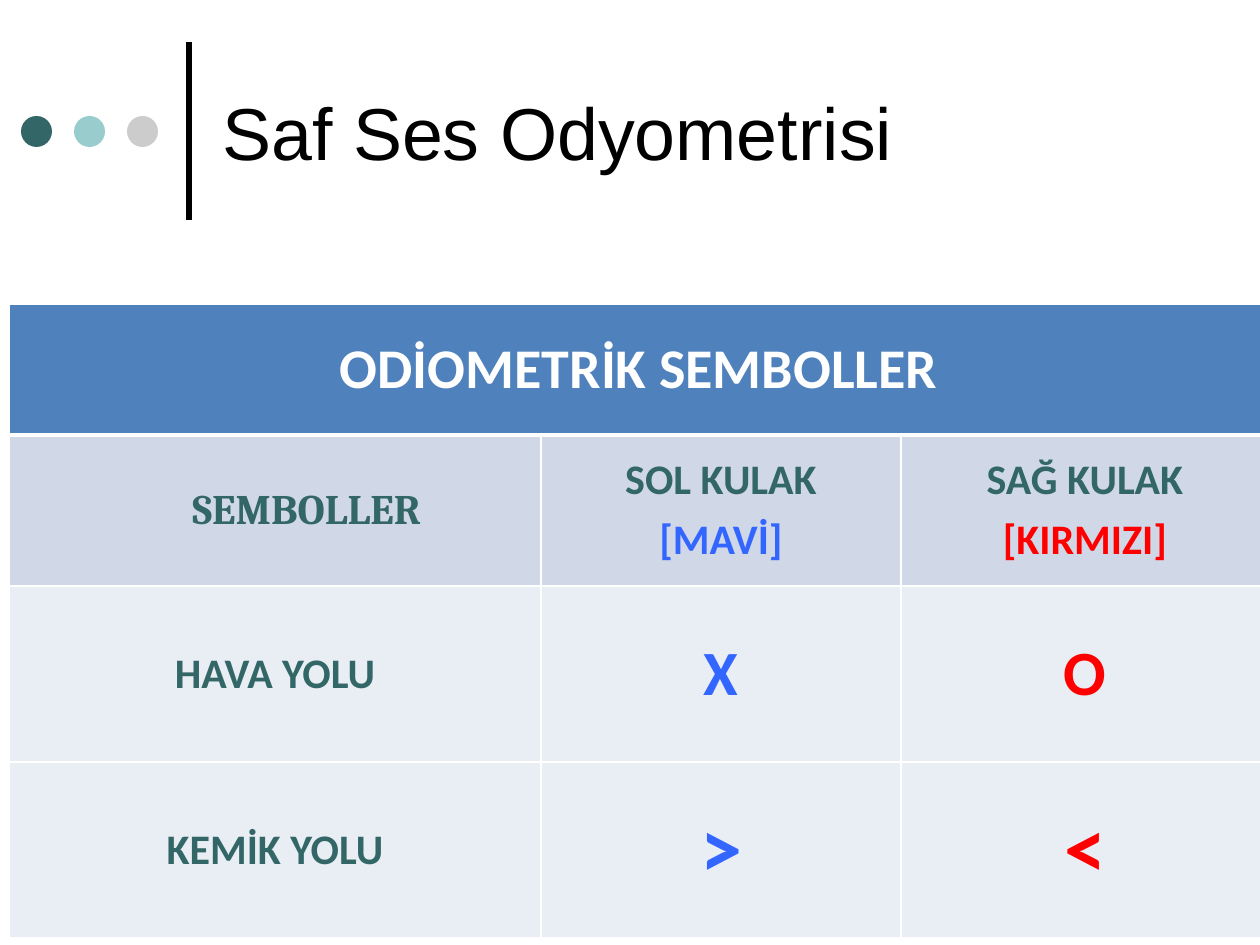
from dataclasses import dataclass

from lxml import etree
from pptx import Presentation
from pptx import util as u
from pptx.dml.color import RGBColor
from pptx.enum import shapes, text
from pptx.oxml.ns import qn

EMU_PER_PX = 914400 / 126

BLACK = RGBColor(0x00, 0x00, 0x00)
WHITE = RGBColor(0xFF, 0xFF, 0xFF)
TEAL = RGBColor(0x33, 0x66, 0x66)
AQUA = RGBColor(0x99, 0xCC, 0xCC)
GREY = RGBColor(0xCC, 0xCC, 0xCC)
LEFT_EAR = RGBColor(0x33, 0x66, 0xFF)
RIGHT_EAR = RGBColor(0xFF, 0x00, 0x00)
HEADER_FILL = RGBColor(0x4F, 0x81, 0xBD)
LABEL_FILL = RGBColor(0xD0, 0xD8, 0xE8)
BODY_FILL = RGBColor(0xE9, 0xED, 0xF4)


@dataclass(frozen=True)
class Line:
    words: str
    color: RGBColor = TEAL
    size: int = 24
    font: str = "Calibri"
    indent: int = 0


@dataclass(frozen=True)
class Row:
    height: int
    fill: RGBColor
    cells: list[list[Line]]
    top: int = 1
    bottom: int = 1


def px(length: int) -> u.Emu:
    return u.Emu(round(length * EMU_PER_PX))


def add_run(paragraph, line: Line, bold: bool) -> None:
    run = paragraph.add_run()
    run.text = line.words
    run.font.name = line.font
    run.font.size = u.Pt(line.size)
    run.font.bold = bold
    run.font.color.rgb = line.color


def add_dot(slide, left: int, color: RGBColor) -> None:
    dot = slide.shapes.add_shape(
        shapes.MSO_SHAPE.OVAL, px(left), px(116), px(31), px(31))
    dot.shadow.inherit = False
    dot.fill.solid()
    dot.fill.fore_color.rgb = color
    dot.line.fill.background()


def add_rule(slide) -> None:
    rule = slide.shapes.add_connector(
        shapes.MSO_CONNECTOR.STRAIGHT, px(189), px(220), px(189), px(42))
    rule.line.color.rgb = BLACK
    rule.line.width = u.Pt(3)
    etree.SubElement(rule._element.spPr, qn("a:effectLst"))


def set_borders(cell, top: int, bottom: int) -> None:
    properties = cell._tc.get_or_add_tcPr()
    widths = {"a:lnL": 1, "a:lnR": 1, "a:lnT": top, "a:lnB": bottom}
    for position, (side, width) in enumerate(widths.items()):
        border = etree.Element(qn(side), w=str(u.Pt(width)))
        fill = etree.SubElement(border, qn("a:solidFill"))
        etree.SubElement(fill, qn("a:srgbClr"), val=str(WHITE))
        properties.insert(position, border)


def fill_cell(cell, lines: list[Line]) -> None:
    cell.vertical_anchor = text.MSO_ANCHOR.MIDDLE
    frame = cell.text_frame
    for index, line in enumerate(lines):
        paragraph = frame.add_paragraph() if index else frame.paragraphs[0]
        paragraph.alignment = text.PP_ALIGN.CENTER
        if index:
            paragraph.space_before = u.Pt(5)
        if line.indent:
            paragraph.level = 1
            properties = paragraph._p.get_or_add_pPr()
            properties.set("marL", str(px(line.indent)))
            properties.set("indent", "0")
        add_run(paragraph, line, bold=True)


def add_symbol_table(slide, widths: list[int], rows: list[Row]) -> None:
    table = slide.shapes.add_table(
        len(rows), len(widths), px(9), px(304),
        px(sum(widths)), px(sum(row.height for row in rows))).table
    table.first_row = table.horz_banding = False
    for column, width in zip(table.columns, widths):
        column.width = px(width)
    for index, row in enumerate(rows):
        table.rows[index].height = px(row.height)
        for cell in table.rows[index].cells:
            cell.fill.solid()
            cell.fill.fore_color.rgb = row.fill
            set_borders(cell, row.top, row.bottom)
        for cell, lines in zip(table.rows[index].cells, row.cells):
            fill_cell(cell, lines)
    table.cell(0, 0).merge(table.cell(0, len(widths) - 1))


def add_title(slide) -> None:
    title = slide.shapes.title
    title.left, title.top, title.width, title.height = map(
        px, (210, 26, 966, 210))
    frame = title.text_frame
    frame.word_wrap = True
    frame.auto_size = text.MSO_AUTO_SIZE.NONE
    frame.vertical_anchor = text.MSO_ANCHOR.MIDDLE
    heading = frame.paragraphs[0]
    heading.alignment = text.PP_ALIGN.LEFT
    add_run(heading, Line("Saf Ses Odyometrisi", BLACK, 42, "Arial"), bold=False)


ROWS = [
    Row(131, HEADER_FILL, [[Line("ODİOMETRİK SEMBOLLER", WHITE, 32)]], bottom=3),
    Row(151, LABEL_FILL, [
        [Line("SEMBOLLER", font="Cambria", indent=63)],
        [Line("SOL KULAK"), Line("[MAVİ]", LEFT_EAR)],
        [Line("SAĞ KULAK"), Line("[KIRMIZI]", RIGHT_EAR)],
    ], top=3),
    Row(176, BODY_FILL, [
        [Line("HAVA YOLU")],
        [Line("X", LEFT_EAR, 36)],
        [Line("O", RIGHT_EAR, 36)],
    ]),
    Row(176, BODY_FILL, [
        [Line("KEMİK YOLU")],
        [Line(">", LEFT_EAR, 48)],
        [Line("<", RIGHT_EAR, 48)],
    ]),
]


def main() -> None:
    deck = Presentation()
    deck.slide_width, deck.slide_height = px(1260), px(945)
    slide = deck.slides.add_slide(deck.slide_layouts[5])

    # Title with its rule and dots
    add_title(slide)
    add_rule(slide)
    for index, color in enumerate((TEAL, AQUA, GREY)):
        add_dot(slide, 21 + 53 * index, color)

    # Audiometric symbols by ear
    add_symbol_table(slide, [532, 360, 368], ROWS)

    deck.save("out.pptx")


if __name__ == "__main__":
    main()
